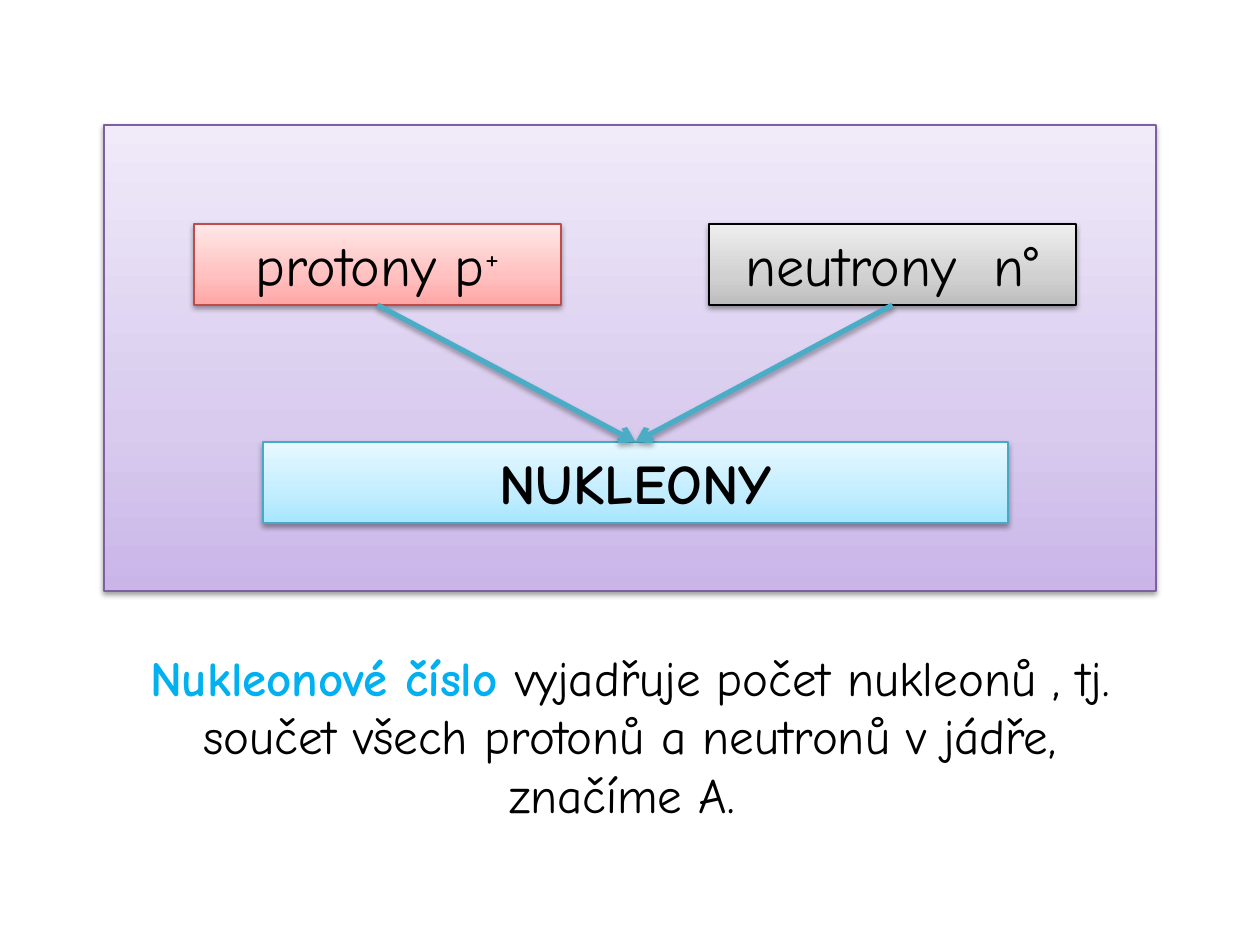
from copy import deepcopy

from lxml import etree
from pptx import Presentation
from pptx.dml.color import RGBColor
from pptx.enum.shapes import MSO_CONNECTOR, MSO_SHAPE
from pptx.enum.text import MSO_ANCHOR, MSO_AUTO_SIZE, PP_ALIGN
from pptx.oxml.ns import qn
from pptx.util import Emu, Pt

PX = 914400 // 126
SLIDE_SIZE = (1260, 945)
FONT = "Comic Neue"
RECTANGLE = MSO_SHAPE.RECTANGLE
STRAIGHT = MSO_CONNECTOR.STRAIGHT
CENTER = PP_ALIGN.CENTER
TOP = MSO_ANCHOR.TOP
FIT_SHAPE = MSO_AUTO_SIZE.SHAPE_TO_FIT_TEXT

BLACK = RGBColor(0x00, 0x00, 0x00)
BRIGHT_BLUE = RGBColor(0x00, 0xB0, 0xF0)
TEAL = RGBColor(0x4B, 0xAC, 0xC6)
PURPLE_LINE = RGBColor(0x7D, 0x60, 0xA0)
RED_LINE = RGBColor(0xBF, 0x4C, 0x48)
BLUE_LINE = RGBColor(0x46, 0xAA, 0xC5)
# Gradients run from the bottom edge to the top edge.
PURPLES = (RGBColor(0xC9, 0xB5, 0xE8), RGBColor(0xD8, 0xCB, 0xEE), RGBColor(0xF0, 0xEA, 0xF9))
REDS = (RGBColor(0xFF, 0xA6, 0xA5), RGBColor(0xFF, 0xC0, 0xBF), RGBColor(0xFF, 0xE7, 0xE7))
GREYS = (RGBColor(0xBD, 0xBD, 0xBD), RGBColor(0xD1, 0xD1, 0xD1), RGBColor(0xEE, 0xEE, 0xEE))
BLUES = (RGBColor(0xA7, 0xE6, 0xFF), RGBColor(0xC1, 0xED, 0xFF), RGBColor(0xE7, 0xF8, 0xFF))
GRADIENT_POSITIONS = (0, 0.35, 1)

# Boxes are left, top, width, height in px.
PANEL = (104, 125, 1052, 466)
PROTONS = (194, 224, 367, 81)
NEUTRONS = (709, 224, 367, 81)
NUCLEONS = (263, 442, 745, 81)
DEFINITION = (104, 641, 1052, 190)

# Each run is its text and what differs from the format of its box.
PROTON_RUNS = [("protony p", {}), ("+", {"baseline": 30000})]
NEUTRON_RUNS = [("neutrony  n°", {})]
NUCLEON_RUNS = [("NUKLEONY", {"bold": True})]
DEFINITION_RUNS = [
    ("Nukleonové číslo ", {"bold": True, "color": BRIGHT_BLUE}),
    ("vyjadřuje počet nukleonů , tj. součet všech protonů a neutronů v jádře, značíme A. ", {}),
]
CARDS = [
    (PANEL, PURPLES, PURPLE_LINE, [], 0),
    (PROTONS, REDS, RED_LINE, PROTON_RUNS, 71),
    (NEUTRONS, GREYS, BLACK, NEUTRON_RUNS, 0),
    (NUCLEONS, BLUES, BLUE_LINE, NUCLEON_RUNS, 0),
]
ARROWS = [(PROTONS, NUCLEONS), (NEUTRONS, NUCLEONS)]


def px(*lengths):
    return [Emu(round(length * PX)) for length in lengths]


def add_shadow(shape, opacity, distance):
    """Give the shape a soft shadow straight below it."""
    effects = etree.SubElement(shape._element.spPr, qn("a:effectLst"))
    shadow = etree.SubElement(
        effects, qn("a:outerShdw"), blurRad=str(Pt(3.1)), dist=str(Pt(distance)),
        dir="5400000", rotWithShape="0")
    color = etree.SubElement(shadow, qn("a:srgbClr"), val=str(BLACK))
    etree.SubElement(color, qn("a:alpha"), val=str(opacity * 1000))


def fill_gradient(shape, colors):
    shape.fill.gradient()
    shape.fill.gradient_angle = 90
    stop_list = shape._element.spPr.find(".//" + qn("a:gsLst"))
    stop_list.append(deepcopy(stop_list[-1]))
    for stop, color, position in zip(shape.fill.gradient_stops, colors, GRADIENT_POSITIONS):
        stop.color.rgb = color
        stop.position = position


def write_text(shape, runs, size, hanging=0):
    """Write one centred paragraph; hanging is its hanging indent in px."""
    frame = shape.text_frame
    frame.word_wrap = True
    frame.auto_size = FIT_SHAPE
    frame.vertical_anchor = TOP
    paragraph = frame.paragraphs[0]
    paragraph.alignment = CENTER
    if hanging:
        properties = paragraph._p.get_or_add_pPr()
        properties.set("marL", str(hanging * PX))
        properties.set("indent", str(-hanging * PX))
    for text, style in runs:
        run = paragraph.add_run()
        run.text = text
        run.font.name = FONT
        run.font.size = Pt(size)
        run.font.bold = style.get("bold", False)
        run.font.color.rgb = style.get("color", BLACK)
        if "baseline" in style:
            run._r.get_or_add_rPr().set("baseline", str(style["baseline"]))


def add_card(slide, box, colors, line_color, runs, hanging):
    shape = slide.shapes.add_shape(RECTANGLE, *px(*box))
    fill_gradient(shape, colors)
    shape.line.color.rgb = line_color
    shape.line.width = Pt(0.75)
    add_shadow(shape, 38, 1.6)
    if runs:
        write_text(shape, runs, 32, hanging)


def add_arrow(slide, source, target):
    """Point from the bottom centre of source to the top centre of target."""
    left, top, width, height = source
    target_left, target_top, target_width, _ = target
    arrow = slide.shapes.add_connector(STRAIGHT, *px(
        left + width / 2, top + height, target_left + target_width / 2, target_top))
    arrow.line.color.rgb = TEAL
    arrow.line.width = Pt(3)
    etree.SubElement(arrow.line._get_or_add_ln(), qn("a:tailEnd"), type="arrow")
    add_shadow(arrow, 35, 1.8)


def main():
    presentation = Presentation()
    presentation.slide_width, presentation.slide_height = px(*SLIDE_SIZE)
    slide = presentation.slides.add_slide(presentation.slide_layouts[6])
    for card in CARDS:
        add_card(slide, *card)
    definition = slide.shapes.add_textbox(*px(*DEFINITION))
    write_text(definition, DEFINITION_RUNS, 28)
    for source, target in ARROWS:
        add_arrow(slide, source, target)
    presentation.save("out.pptx")


if __name__ == "__main__":
    main()
